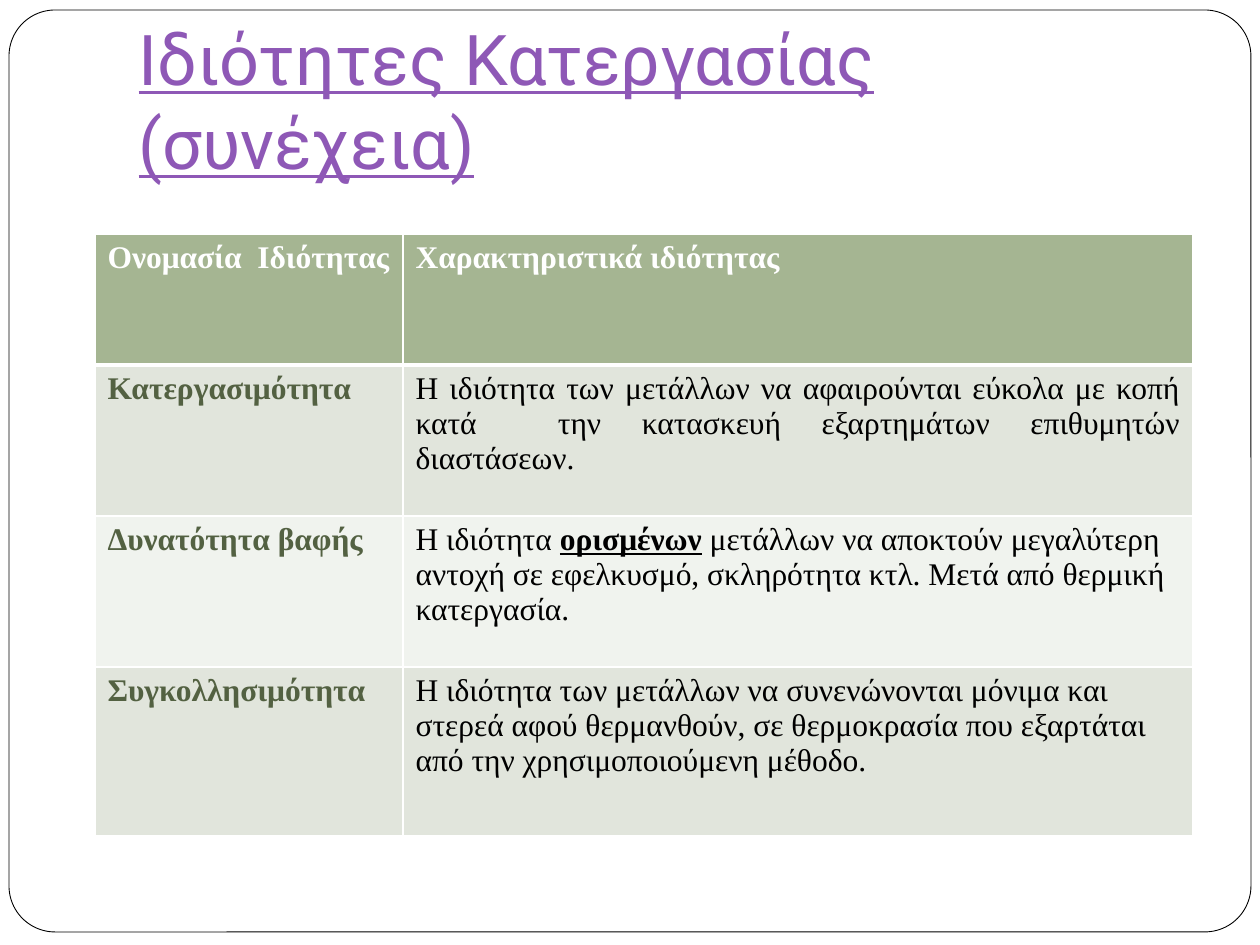
from dataclasses import dataclass

from lxml.etree import SubElement
from pptx import Presentation
from pptx.dml.color import RGBColor
from pptx.enum.shapes import MSO_SHAPE as Preset
from pptx.enum.text import MSO_ANCHOR as Anchor, MSO_AUTO_SIZE as AutoSize, PP_ALIGN as Align
from pptx.oxml import parse_xml
from pptx.oxml.ns import nsdecls, qn
from pptx.util import Emu, Pt

PX_PER_INCH = 126
COLORS = {
    "white": "FFFFFF", "black": "000000", "purple": "8E58B6", "header": "A5B592",
    "name": "536142", "band_dark": "E1E5DC", "band_light": "F0F3EE",
}
COLUMNS = (308, 790)
HEADER_HEIGHT = 131


@dataclass(frozen=True)
class Run:
    text: str
    color: str = "black"
    bold: bool = False
    underline: bool = False
    size: int = 18
    font: str = "Times New Roman"


@dataclass(frozen=True)
class Property:
    name: str
    description: tuple[Run, ...]
    height: int
    align: Align = Align.LEFT


PROPERTIES = (
    Property("Κατεργασιμότητα", (
        Run("Η ιδιότητα των μετάλλων να αφαιρούνται εύκολα με κοπή κατά  την "
            "κατασκευή εξαρτημάτων επιθυμητών διαστάσεων."),
    ), 151, Align.JUSTIFY),
    Property("Δυνατότητα βαφής", (
        Run("Η ιδιότητα "),
        Run("ορισμένων", bold=True, underline=True),
        Run(" μετάλλων να αποκτούν μεγαλύτερη αντοχή σε εφελκυσμό, σκληρότητα κτλ. "
            "Μετά από θερμική κατεργασία."),
    ), 151),
    Property("Συγκολλησιμότητα", (
        Run("Η ιδιότητα των μετάλλων να συνενώνονται μόνιμα και στερεά αφού θερμανθούν, "
            "σε θερμοκρασία που εξαρτάται από την χρησιμοποιούμενη μέθοδο."),
    ), 169),
)


def px(length: int) -> Emu:
    return Emu(round(length * 914400 / PX_PER_INCH))


def rgb(color: str) -> RGBColor:
    return RGBColor.from_string(COLORS[color])


def write(text_frame, runs: tuple[Run, ...], align: Align = Align.LEFT) -> None:
    paragraph = text_frame.paragraphs[0]
    paragraph.alignment = align
    for part in runs:
        run = paragraph.add_run()
        run.text = part.text
        formats = {"name": part.font, "size": Pt(part.size),
                   "bold": part.bold, "underline": part.underline}
        for attribute, value in formats.items():
            setattr(run.font, attribute, value)
        run.font.color.rgb = rgb(part.color)


def add_borders(cell, top: int, bottom: int) -> None:
    """Draw white cell borders, with widths in points."""
    properties = cell._tc.get_or_add_tcPr()
    widths = {"lnL": 1, "lnR": 1, "lnT": top, "lnB": bottom}
    for index, (side, width) in enumerate(widths.items()):
        border = parse_xml(f'<a:{side} {nsdecls("a")} w="{Pt(width)}"/>')
        fill = SubElement(border, qn("a:solidFill"))
        SubElement(fill, qn("a:srgbClr"), val=COLORS["white"])
        properties.insert(index, border)


def fill_row(table, row: int, contents, color: str, aligns) -> None:
    for column, (runs, align) in enumerate(zip(contents, aligns)):
        cell = table.cell(row, column)
        cell.fill.solid()
        cell.fill.fore_color.rgb = rgb(color)
        write(cell.text_frame, runs, align)
        add_borders(cell, top=3 if row == 1 else 1, bottom=3 if row == 0 else 1)


def add_title(slide) -> None:
    title = slide.shapes.title
    bounds = {"left": 126, "top": 38, "width": 1071, "height": 158}
    for attribute, value in bounds.items():
        setattr(title, attribute, px(value))
    frame_formats = {"auto_size": AutoSize.NONE, "word_wrap": True,
                     "vertical_anchor": Anchor.BOTTOM, "margin_bottom": Pt(7.2)}
    for attribute, value in frame_formats.items():
        setattr(title.text_frame, attribute, value)
    write(title.text_frame, (Run("Ιδιότητες Κατεργασίας (συνέχεια)", "purple",
                                 underline=True, size=40, font="Roboto"),))


def add_page_frame(slide) -> None:
    """Draw the rounded page outline behind the title."""
    outline = slide.shapes.add_shape(Preset.ROUNDED_RECTANGLE,
                                     px(9), px(10), px(1242), px(922))
    outline.adjustments[0] = 0.05
    outline.shadow.inherit = False
    outline.fill.solid()
    outline.fill.fore_color.rgb = rgb("white")
    outline.line.color.rgb = rgb("black")
    outline.line.width = Pt(0.5)
    slide.shapes.title.element.addprevious(outline.element)


def add_property_table(slide) -> None:
    heights = (HEADER_HEIGHT, *(item.height for item in PROPERTIES))
    table = slide.shapes.add_table(len(heights), len(COLUMNS), px(95), px(234),
                                   px(sum(COLUMNS)), px(sum(heights))).table
    for column, width in zip(table.columns, COLUMNS):
        column.width = px(width)
    for row, height in zip(table.rows, heights):
        row.height = px(height)

    headings = [(Run(text, "white", bold=True),)
                for text in ("Ονομασία  Ιδιότητας", "Χαρακτηριστικά ιδιότητας")]
    fill_row(table, 0, headings, "header", (Align.LEFT, Align.LEFT))
    for row, item in enumerate(PROPERTIES, start=1):
        contents = ((Run(item.name, "name", bold=True),), item.description)
        band = "band_dark" if row % 2 else "band_light"
        fill_row(table, row, contents, band, (Align.LEFT, item.align))


def main() -> None:
    deck = Presentation()
    deck.slide_width, deck.slide_height = px(1260), px(945)
    slide = deck.slides.add_slide(deck.slide_layouts.get_by_name("Title Only"))
    add_title(slide)
    add_page_frame(slide)
    add_property_table(slide)
    deck.save("out.pptx")


if __name__ == "__main__":
    main()
